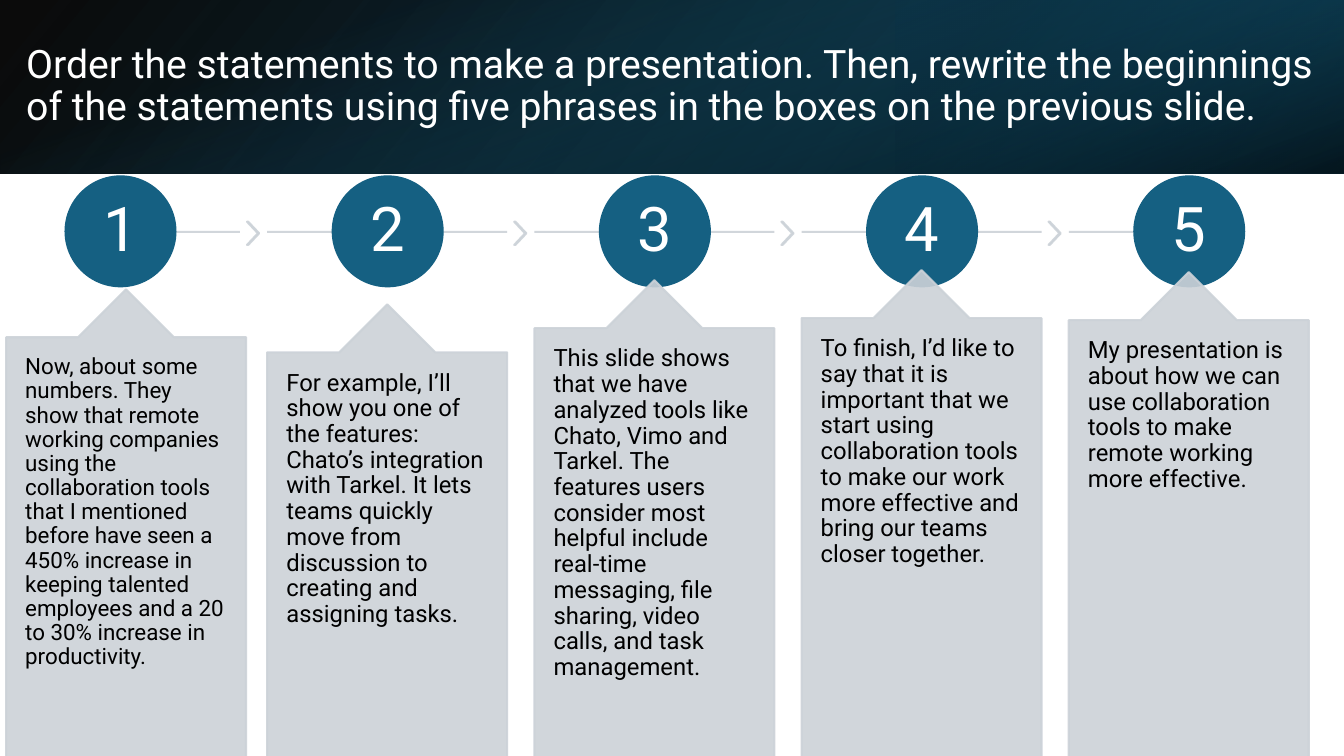
from pptx import Presentation, util as u
from pptx.dml.color import RGBColor
from pptx.enum import shapes, text
from pptx.oxml import ns, xmlchemy

FONT = "Roboto"
BLUE, GREY, WHITE, BLACK = "156082", "CCD2D8", "FFFFFF", "000000"
PITCH = 2.65
COLUMN = 2.38
BANNER = 1.72
STEPS = [
    (0.06, 2.87, 5.19, 16, "Now, about some numbers. They show that remote working companies using the collaboration tools that I mentioned before have seen a 450% increase in keeping talented employees and a 20 to 30% increase in productivity."),
    (PITCH, 3.02, 4.9, 17, "For example, I’ll show you one of the features: Chato’s integration with Tarkel. It lets teams quickly move from discussion to creating and assigning tasks."),
    (2 * PITCH, 2.78, 5.19, 17, "This slide shows that we have analyzed tools like Chato, Vimo and Tarkel. The features users consider most helpful include real-time messaging, file sharing, video calls, and task management."),
    (3 * PITCH, 2.68, 5.19, 17, "To finish, I’d like to say that it is important that we start using collaboration tools to make our work more effective and bring our teams closer together."),
    (4 * PITCH, 2.7, 5.19, 17, "My presentation is about how we can use collaboration tools to make remote working more effective."),
]


def colour(value):
    """Turn a hex string into a colour."""
    return RGBColor.from_string(value)


def set_opacity(shape, levels):
    """Give the shape's colours, in order, their opacity in percent."""
    for node, level in zip(shape._element.spPr.iter(ns.qn("a:srgbClr")), levels):
        alpha = xmlchemy.OxmlElement("a:alpha")
        alpha.set("val", str(level * 1000))
        node.append(alpha)


def add_preset(parent, preset, box, fill=None, opacity=100):
    """Add a shadowless preset shape, filled and outlined in one colour."""
    shape = parent.shapes.add_shape(preset, *map(u.Inches, box))
    shape.shadow.inherit = False
    if fill:
        shape.fill.solid()
        shape.fill.fore_color.rgb = colour(fill)
        shape.line.color.rgb = colour(fill)
        shape.line.width = u.Pt(1.5)
        set_opacity(shape, [opacity, opacity])
    return shape


def write(shape, words, size, ink, align, anchor, insets):
    """Write one paragraph into a shape."""
    frame = shape.text_frame
    left, top = map(u.Inches, insets)
    formats = {"word_wrap": True, "auto_size": text.MSO_AUTO_SIZE.NONE,
               "vertical_anchor": anchor, "margin_left": left, "margin_right": left,
               "margin_top": top, "margin_bottom": top}
    for name, value in formats.items():
        setattr(frame, name, value)
    para = frame.paragraphs[0]
    para.alignment, para.line_spacing = align, 0.9
    span = para.add_run()
    span.text = words
    for name, value in {"name": FONT, "size": u.Pt(size)}.items():
        setattr(span.font, name, value)
    span.font.color.rgb = colour(ink)


def add_gradient(page, box, rotation, flip, angle, stops):
    """Add a rectangle with a two-stop gradient of (position, colour, opacity)."""
    shape = add_preset(page, shapes.MSO_SHAPE.RECTANGLE, box)
    shape.line.fill.background()
    shape.rotation = rotation
    if flip:
        shape._element.spPr.find(ns.qn("a:xfrm")).set("flipH", "1")
    shape.fill.gradient()
    shape.fill.gradient_angle = 360 - angle
    for stop, (position, value, _) in zip(shape.fill.gradient_stops, stops):
        stop.position = position
        stop.color.rgb = colour(value)
    set_opacity(shape, [opacity for _, _, opacity in stops])


def add_banner(page, width, height):
    """Layer the gradients of the banner and set the title over them."""
    add_gradient(page, (0, 0, width, height), 0, True, 140,
                 [(0, BLACK, 96), (1, "104862", 100)])
    add_gradient(page, (width * 2 / 3, 0, width / 3, height), 180, True, 320,
                 [(0.19, "0B3041", 68), (1, BLUE, 79)])
    shift = (width - height) / 2
    add_gradient(page, (shift, -shift, height, width), 90, False, 340,
                 [(0.23, BLUE, 0), (0.99, BLACK, 74)])
    title = page.shapes.title
    box = {"left": 0.16, "top": 0.38, "width": 12.96, "height": 0.96}
    for name, value in box.items():
        setattr(title, name, u.Inches(value))
    write(title, "Order the statements to make a presentation. Then, rewrite the "
          "beginnings of the statements using five phrases in the boxes on the "
          "previous slide.", 28, WHITE, text.PP_ALIGN.LEFT,
          text.MSO_ANCHOR.MIDDLE, (0.1, 0.05))
    page.shapes._spTree.append(title._element)


def add_track(group, start, end, top):
    """Draw the thin line running behind a circle."""
    line = group.shapes.add_connector(shapes.MSO_CONNECTOR.STRAIGHT,
                                      *map(u.Inches, (start, top, end, top)))
    line.line.color.rgb = colour(GREY)
    line.line.width = u.Pt(1.5)
    set_opacity(line, [90])
    line._element.spPr.append(xmlchemy.OxmlElement("a:effectLst"))


def add_step(group, index, left, top, height, size, words):
    """Place one numbered circle with its track and callout."""
    column = index * PITCH
    first, last = index == 0, index == len(STEPS) - 1
    add_track(group, column + (1.33 if first else 0),
              column + (COLUMN / 2 if last else COLUMN), 2.3)
    if not last:
        chevron = add_preset(group, shapes.MSO_SHAPE.CHEVRON,
                             (column + 2.45, 2.2, 0.12, 0.23), GREY, 90)
        chevron.adjustments[0] = 0.9
    circle = add_preset(group, shapes.MSO_SHAPE.OVAL,
                        (column + 0.65, 1.75, 1.09, 1.09), BLUE)
    write(circle, str(index + 1), 44, WHITE, text.PP_ALIGN.CENTER,
          text.MSO_ANCHOR.MIDDLE, (0.04, 0.04))
    callout = add_preset(group, shapes.MSO_SHAPE.UP_ARROW_CALLOUT,
                         (left, top, COLUMN, height), GREY, 90)
    for place, value in enumerate((0.4, 0.2, 0.2, 1 - 0.2 * COLUMN / height)):
        callout.adjustments[place] = value
    write(callout, words, size, BLACK, text.PP_ALIGN.LEFT,
          text.MSO_ANCHOR.TOP, (0.19, 0.18))


def main():
    """Build the slide and save it."""
    deck = Presentation()
    deck.slide_width, deck.slide_height = u.Inches(13.33), u.Inches(7.5)
    page = deck.slides.add_slide(deck.slide_layouts.get_by_name("Title Only"))
    add_banner(page, 13.33, BANNER)
    for index, step in enumerate(STEPS):
        add_step(page.shapes.add_group_shape(), index, *step)
    deck.save("out.pptx")


if __name__ == "__main__":
    main()
